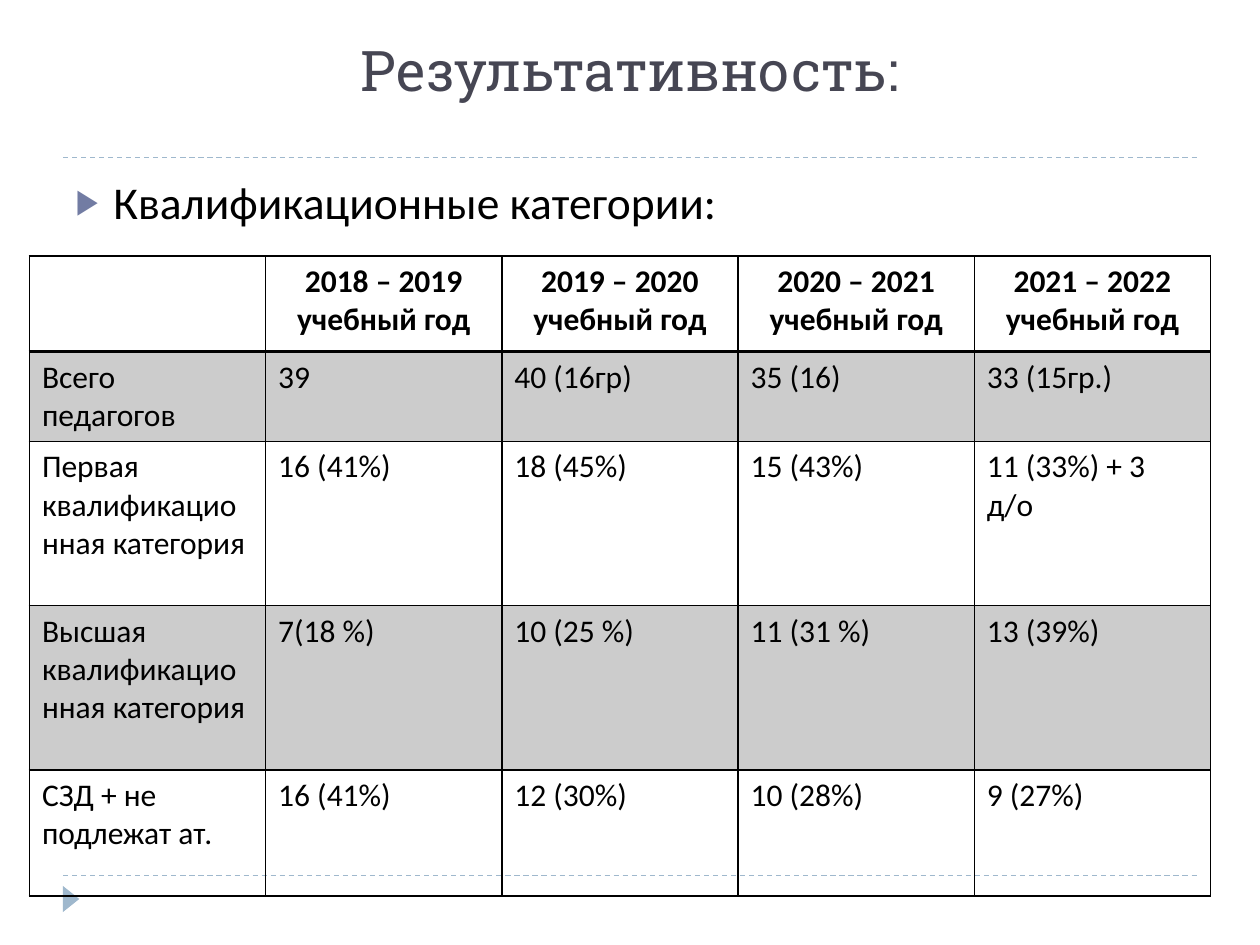
from dataclasses import dataclass

from lxml import etree
from pptx import Presentation
from pptx.dml.color import RGBColor
from pptx.enum.dml import MSO_LINE
from pptx.enum.shapes import MSO_CONNECTOR, MSO_SHAPE
from pptx.enum.text import MSO_ANCHOR, PP_ALIGN
from pptx.oxml.ns import qn
from pptx.util import Pt

STRAIGHT = MSO_CONNECTOR.STRAIGHT
TRIANGLE = MSO_SHAPE.ISOSCELES_TRIANGLE
DASH = MSO_LINE.DASH
TOP, BOTTOM = MSO_ANCHOR.TOP, MSO_ANCHOR.BOTTOM
LEFT, CENTER = PP_ALIGN.LEFT, PP_ALIGN.CENTER


@dataclass(frozen=True)
class Theme:
    title_font: str = "Roboto Slab"
    body_font: str = "Calibri"
    title_size: float = 32
    body_size: float = 26
    table_size: float = 18
    title_color: str = "464653"
    text_color: str = "000000"
    accent: str = "9FB8CD"
    bullet: str = "727CA3"
    border: str = "000000"
    band: str = "000000"
    band_alpha: int = 20


THEME = Theme()

YEARS = [
    ["2018 – 2019 учебный год"],
    ["2019 – 2020 учебный год"],
    ["2020 – 2021 учебный год"],
    ["2021 – 2022", "учебный год"],
]
STAFF = [
    ["Всего педагогов", "39", "40 (16гр)", "35 (16)", "33 (15гр.)"],
    ["Первая квалификационная категория",
     "16 (41%)", "18 (45%)", "15 (43%)", "11 (33%) + 3 д/о"],
    ["Высшая квалификационная категория",
     "7(18 %)", "10 (25 %)", "11 (31 %)", "13 (39%)"],
    ["СЗД + не подлежат ат.", "16 (41%)", "12 (30%)", "10 (28%)", "9 (27%)"],
]
ROW_HEIGHTS = [54.7, 50.8, 94, 94, 72]
COLUMN_WIDTH = 135


def place(shape, left, top, width, height):
    shape.left, shape.top = Pt(left), Pt(top)
    shape.width, shape.height = Pt(width), Pt(height)


def add_text(paragraph, text, font_name, size, color, bold=False, align=LEFT):
    paragraph.alignment = align
    run = paragraph.add_run()
    run.text = text
    run.font.name = font_name
    run.font.size = Pt(size)
    run.font.bold = bold
    run.font.color.rgb = RGBColor.from_string(color)


def add_bullet(paragraph):
    properties = paragraph._p.get_or_add_pPr()
    properties.set("marL", str(Pt(21.6)))
    properties.set("indent", str(-Pt(21.6)))
    color = etree.SubElement(properties, qn("a:buClr"))
    etree.SubElement(color, qn("a:srgbClr"), val=THEME.bullet)
    etree.SubElement(properties, qn("a:buSzPct"), val="76000")
    etree.SubElement(properties, qn("a:buChar"), char="▶")


def add_title(slide, text):
    title = slide.shapes.title
    place(title, 36, 12.2, 648, 50)
    title.text_frame.vertical_anchor = BOTTOM
    add_text(title.text_frame.paragraphs[0], text, THEME.title_font,
             THEME.title_size, THEME.title_color, align=CENTER)


def add_body(slide, text):
    body = slide.placeholders[1]
    place(body, 36, 96, 648, 389)
    body.text_frame.vertical_anchor = TOP
    paragraph = body.text_frame.paragraphs[0]
    add_bullet(paragraph)
    paragraph.space_before = Pt(0)
    add_text(paragraph, text, THEME.body_font, THEME.body_size,
             THEME.text_color)


def add_rule(slide, y):
    rule = slide.shapes.add_connector(STRAIGHT, Pt(36), Pt(y), Pt(684), Pt(y))
    rule.line.color.rgb = RGBColor.from_string(THEME.accent)
    rule.line.width = Pt(0.75)
    rule.line.dash_style = DASH
    etree.SubElement(rule._element.spPr, qn("a:effectLst"))


def add_page_marker(slide):
    marker = slide.shapes.add_shape(TRIANGLE, Pt(33.1), Pt(509),
                                    Pt(15), Pt(9.4))
    marker.rotation = 90
    marker.shadow.inherit = False
    marker.fill.solid()
    marker.fill.fore_color.rgb = RGBColor.from_string(THEME.accent)
    marker.line.fill.background()


def set_borders(cell, top=1, bottom=1):
    properties = cell._tc.get_or_add_tcPr()
    widths = {"a:lnL": 1, "a:lnR": 1, "a:lnT": top, "a:lnB": bottom}
    for side, width in widths.items():
        line = etree.SubElement(properties, qn(side), w=str(Pt(width)))
        fill = etree.SubElement(line, qn("a:solidFill"))
        etree.SubElement(fill, qn("a:srgbClr"), val=THEME.border)


def set_fill(cell, banded):
    if not banded:
        cell.fill.background()
        return
    cell.fill.solid()
    cell.fill.fore_color.rgb = RGBColor.from_string(THEME.band)
    color = cell._tc.tcPr.find(f"{qn('a:solidFill')}/{qn('a:srgbClr')}")
    etree.SubElement(color, qn("a:alpha"), val=str(THEME.band_alpha * 1000))


def fill_cell(cell, lines, header):
    for index, text in enumerate(lines):
        frame = cell.text_frame
        paragraph = frame.add_paragraph() if index else frame.paragraphs[0]
        add_text(paragraph, text, THEME.body_font, THEME.table_size,
                 THEME.text_color, bold=header,
                 align=CENTER if header else LEFT)


def add_category_table(slide):
    rows = [[[]] + YEARS] + [[[text] for text in row] for row in STAFF]
    columns = len(rows[0])
    table = slide.shapes.add_table(
        len(rows), columns, Pt(16.8), Pt(146.3),
        Pt(COLUMN_WIDTH * columns), Pt(sum(ROW_HEIGHTS))).table
    table.horz_banding = False
    for column in table.columns:
        column.width = Pt(COLUMN_WIDTH)
    for r, (row, height) in enumerate(zip(rows, ROW_HEIGHTS)):
        table.rows[r].height = Pt(height)
        for c, lines in enumerate(row):
            cell = table.cell(r, c)
            set_borders(cell, top=2 if r == 1 else 1,
                        bottom=2 if r == 0 else 1)
            set_fill(cell, banded=r % 2 == 1)
            fill_cell(cell, lines, header=r == 0)


def main():
    presentation = Presentation()
    presentation.slide_width, presentation.slide_height = Pt(720), Pt(540)
    slide = presentation.slides.add_slide(presentation.slide_layouts[1])
    for y in (500.4, 90):
        add_rule(slide, y)
    add_page_marker(slide)
    add_title(slide, "Результативность:")
    add_body(slide, "Квалификационные категории:")
    add_category_table(slide)
    presentation.save("out.pptx")


if __name__ == "__main__":
    main()
